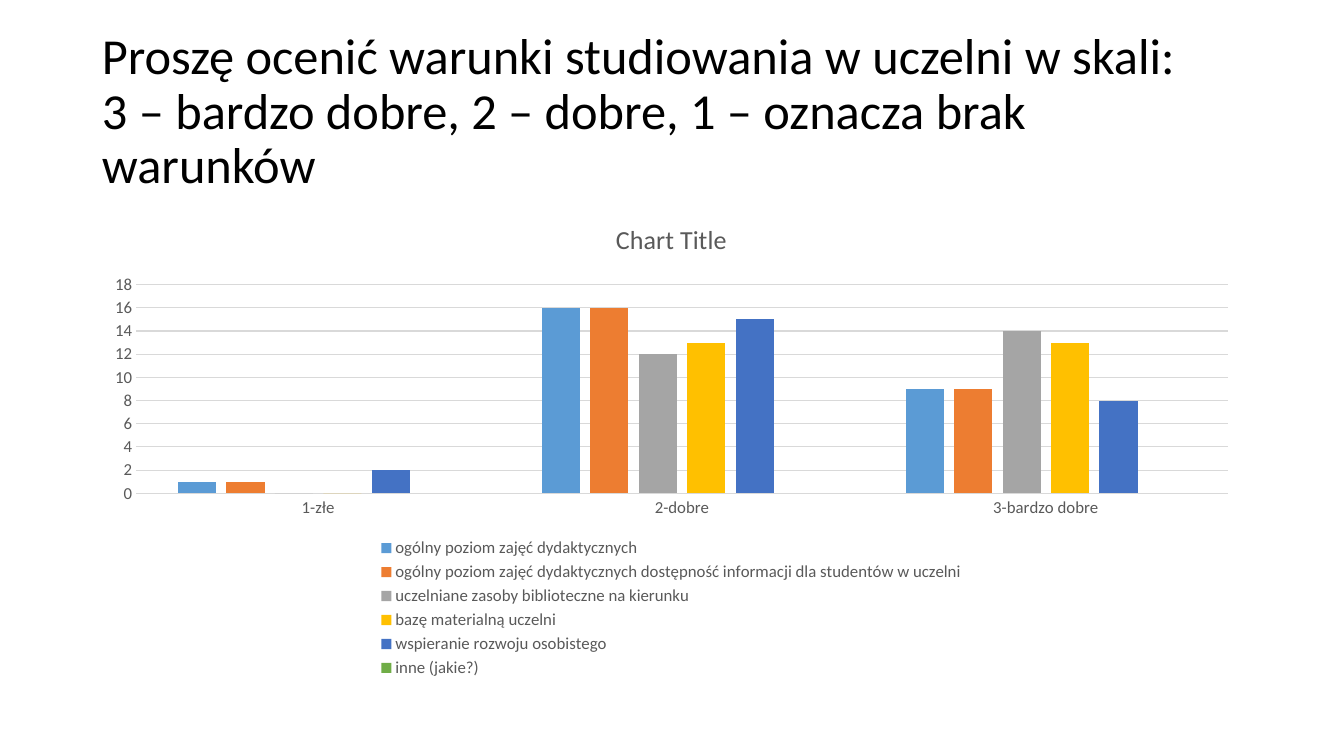
"""Build a survey slide with a clustered column chart of study conditions."""
from pptx import Presentation
from pptx.chart.data import CategoryChartData
from pptx.dml.color import RGBColor
from pptx.enum.chart import XL_CHART_TYPE as ChartType, XL_LEGEND_POSITION as LegendSide
from pptx.enum.chart import XL_TICK_MARK as Tick
from pptx.enum.text import MSO_ANCHOR as Anchor
from pptx.util import Emu, Pt

EMU_PER_PX = 914400 / 100.8
COLOURS = {
    "background": "FFFFFF", "title": "000000", "label": "595959", "grid": "D9D9D9",
    "blue": "5B9BD5", "orange": "ED7D31", "grey": "A5A5A5",
    "yellow": "FFC000", "navy": "4472C4", "green": "70AD47",
}
QUESTION = ("Proszę ocenić warunki studiowania w uczelni w skali:\n"
            "3 – bardzo dobre, 2 – dobre, 1 – oznacza brak warunków")
RATINGS = ["1-złe", "2-dobre", "3-bardzo dobre"]
CONDITIONS = [
    ("ogólny poziom zajęć dydaktycznych", (1, 16, 9), "blue"),
    ("ogólny poziom zajęć dydaktycznych dostępność informacji dla studentów w uczelni",
     (1, 16, 9), "orange"),
    ("uczelniane zasoby biblioteczne na kierunku", (0, 12, 14), "grey"),
    ("bazę materialną uczelni", (0, 13, 13), "yellow"),
    ("wspieranie rozwoju osobistego", (2, 15, 8), "navy"),
    ("inne (jakie?)", (None, None, None), "green"),
]


def px(length):
    return Emu(round(length * EMU_PER_PX))


def colour(name):
    return RGBColor.from_string(COLOURS[name])


class SlideBuilder:
    def __init__(self, slide, font="Calibri"):
        self.slide = slide
        self.font = font
        slide.background.fill.solid()
        slide.background.fill.fore_color.rgb = colour("background")

    def style(self, font, size, ink):
        font.name = self.font
        font.size = Pt(size)
        font.bold = False
        font.color.rgb = colour(ink)

    def put_text(self, frame, text, size=12, ink="label", spacing=None):
        paragraph = frame.paragraphs[0]
        paragraph.line_spacing = spacing
        for index, line in enumerate(text.split("\n")):
            if index:
                paragraph.add_line_break()
            run = paragraph.add_run()
            run.text = line
            self.style(run.font, size, ink)

    def heading(self, text, *box):
        frame = self.slide.shapes.add_textbox(*map(px, box)).text_frame
        frame.word_wrap = True
        frame.vertical_anchor = Anchor.MIDDLE
        self.put_text(frame, text, size=36, ink="title", spacing=0.9)

    def rule(self, line):
        line.color.rgb = colour("grid")
        line.width = Pt(0.75)

    def columns(self, title, categories, series, *box):
        data = CategoryChartData()
        data.categories = categories
        for name, values, _ in series:
            data.add_series(name, values)
        chart = self.slide.shapes.add_chart(
            ChartType.COLUMN_CLUSTERED, *map(px, box), data).chart
        self.style(chart.font, 10, "title")
        self.put_text(chart.chart_title.text_frame, title, size=18.6)
        chart.chart_title.include_in_layout = False

        plot = chart.plots[0]
        plot.gap_width = 219
        plot.overlap = -27
        plot.vary_by_categories = False
        for columns, (_, _, fill) in zip(plot.series, series):
            columns.format.fill.solid()
            columns.format.fill.fore_color.rgb = colour(fill)

        ratings, counts = chart.category_axis, chart.value_axis
        for axis in (ratings, counts):
            axis.major_tick_mark = axis.minor_tick_mark = Tick.NONE
            self.style(axis.tick_labels.font, 12, "label")
        self.rule(ratings.format.line)
        counts.format.line.fill.background()
        counts.has_major_gridlines = True
        self.rule(counts.major_gridlines.format.line)

        chart.has_legend = True
        chart.legend.position = LegendSide.BOTTOM
        chart.legend.include_in_layout = False
        self.style(chart.legend.font, 12, "label")


def main():
    deck = Presentation()
    deck.slide_width, deck.slide_height = px(1344), px(756)
    survey = SlideBuilder(deck.slides.add_slide(deck.slide_layouts[6]))
    survey.heading(QUESTION, 92, 40, 1159, 146)
    survey.columns("Chart Title", RATINGS, CONDITIONS, 92, 202, 1159, 480)
    deck.save("out.pptx")


if __name__ == "__main__":
    main()
